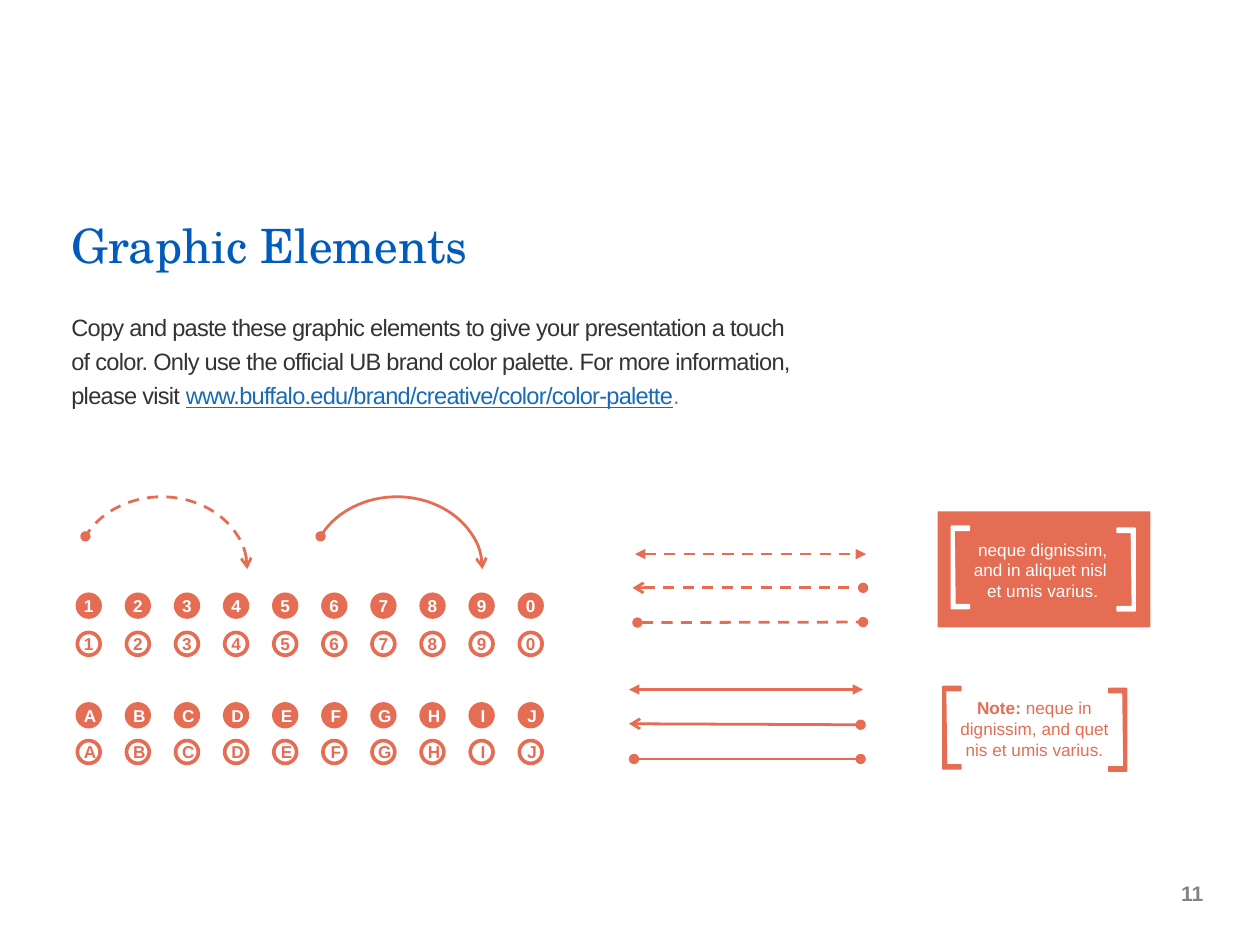
import pptx
import pptx.dml.color
import pptx.enum.dml
import pptx.enum.shapes
import pptx.enum.text
import pptx.oxml.ns
import pptx.util
from lxml import etree

Cm = pptx.util.Cm
Pt = pptx.util.Pt
SHAPE = pptx.enum.shapes.MSO_SHAPE
ALIGN = pptx.enum.text.PP_ALIGN
ANCHOR = pptx.enum.text.MSO_ANCHOR
qn = pptx.oxml.ns.qn

CORAL, WHITE, BLUE = "E56D54", "FFFFFF", "005BBB"
DARK, LINK, GREY = "333333", "186BB7", "828383"
SMALL = 9.8


def rgb(value):
    return pptx.dml.color.RGBColor.from_string(value)


def paint(s, fill=None, line=None, width=1):
    s.shadow.inherit = False
    if fill:
        s.fill.solid()
        s.fill.fore_color.rgb = rgb(fill)
    else:
        s.fill.background()
    if line:
        s.line.color.rgb = rgb(line)
        s.line.width = Pt(width)
    else:
        s.line.fill.background()


def style_stroke(s, head, tail, dashed):
    """Give an open line its colour, dash and end marks."""
    s.line.color.rgb = rgb(CORAL)
    s.line.width = Pt(1.6)
    if dashed:
        s.line.dash_style = pptx.enum.dml.MSO_LINE.DASH
    ln = s.line._get_or_add_ln()
    etree.SubElement(ln, qn("a:headEnd"), type=head)
    etree.SubElement(ln, qn("a:tailEnd"), type=tail)


def add_run(p, text, size, color, font="Arial", bold=False, underline=None):
    r = p.add_run()
    r.text = text
    r.font.name = font
    r.font.size = Pt(size)
    r.font.bold = bold
    r.font.underline = underline
    r.font.color.rgb = rgb(color)
    return r


def add_text(slide, x, y, w, h, align=ALIGN.LEFT, anchor=ANCHOR.TOP):
    """Add a wrapping text box and return its first paragraph."""
    tf = slide.shapes.add_textbox(Cm(x), Cm(y), Cm(w), Cm(h)).text_frame
    tf.word_wrap = True
    tf.vertical_anchor = anchor
    p = tf.paragraphs[0]
    p.alignment = align
    return p


def add_badge_row(slide, labels, y, filled, left_inset=0):
    for i, label in enumerate(labels):
        s = slide.shapes.add_shape(SHAPE.OVAL, Cm(1.56 + i * 0.99), Cm(y), Cm(0.46), Cm(0.46))
        paint(s, CORAL if filled else None, CORAL, 2 if filled else 2.09)
        tf = s.text_frame
        tf.word_wrap = False
        tf.margin_left = Cm(left_inset)
        tf.margin_right = tf.margin_top = tf.margin_bottom = 0
        p = tf.paragraphs[0]
        p.alignment = ALIGN.CENTER
        add_run(p, label, SMALL, WHITE if filled else CORAL, bold=True)


def add_arc(slide, x, dashed):
    s = slide.shapes.add_shape(SHAPE.ARC, Cm(x), Cm(9.75), Cm(2.92), Cm(3.45))
    s.adjustments[0], s.adjustments[1] = 162, 40.02
    s.rotation = 270
    s._element.spPr.get_or_add_xfrm().set("flipV", "1")
    paint(s)
    style_stroke(s, "arrow", "oval", dashed)


def add_line(slide, x1, y1, x2, y2, head, tail, dashed):
    s = slide.shapes.add_connector(
        pptx.enum.shapes.MSO_CONNECTOR.STRAIGHT, Cm(x1), Cm(y1), Cm(x2), Cm(y2))
    style_stroke(s, head, tail, dashed)
    etree.SubElement(s._element.spPr, qn("a:effectLst"))


def add_bracket(slide, x, y, color, rotation=0):
    points = [(0.36, 0), (0, 0), (0, 1.66), (0.36, 1.66),
              (0.36, 1.58), (0.07, 1.58), (0.05, 0.08), (0.36, 0.08)]
    outline = [(Cm(x + dx), Cm(y + dy)) for dx, dy in points]
    builder = slide.shapes.build_freeform(*outline[0])
    builder.add_line_segments(outline[1:], close=True)
    s = builder.convert_to_shape()
    s.rotation = rotation
    paint(s, color, color)


def add_bracket_pair(slide, left, right, y, color):
    add_bracket(slide, left, y, color)
    add_bracket(slide, right, y + 0.04, color, 180)


def add_intro(slide):
    p = add_text(slide, 1.19, 3.66, 8.89, 1.98, anchor=ANCHOR.BOTTOM)
    p.line_spacing = 0.9
    add_run(p, "Graphic Elements", 27, BLUE, "TeX Gyre Schola")

    p = add_text(slide, 1.19, 6.07, 15.16, 2.59)
    p.line_spacing = Pt(19.5)
    for text, color, underline in (
        ("Copy and paste these graphic elements to give your presentation a touch of color. "
         "Only use the official UB brand color palette. For more information, please visit ",
         DARK, None),
        ("www.buffalo.edu/brand/creative/color/color-palette", LINK, True),
        (".", GREY, None),
    ):
        r = add_run(p, text, 13.5, color, underline=underline)
        r.font._element.set("spc", "-40")


def add_notes_in_brackets(slide):
    s = slide.shapes.add_shape(SHAPE.RECTANGLE, Cm(18.9), Cm(10.31), Cm(4.29), Cm(2.34))
    paint(s, CORAL)
    add_bracket_pair(slide, 19.18, 22.52, 10.61, WHITE)
    p = add_text(slide, 19.38, 10.74, 3.28, 1.5, ALIGN.CENTER)
    add_run(p, "neque dignissim, and in aliquet nisl ", SMALL, WHITE)
    p.add_line_break()
    add_run(p, "et umis varius.", SMALL, WHITE)

    add_bracket_pair(slide, 19.01, 22.35, 13.84, CORAL)
    p = add_text(slide, 19, 13.94, 3.71, 1.5, ALIGN.CENTER)
    add_run(p, "Note: ", SMALL, CORAL, bold=True)
    add_run(p, "neque in dignissim, and quet nis et umis varius.", SMALL, CORAL)


def main():
    prs = pptx.Presentation()
    prs.slide_width, prs.slide_height = Cm(25.4), Cm(19.05)
    slide = prs.slides.add_slide(prs.slide_layouts[6])

    add_intro(slide)
    add_arc(slide, 1.8, True)
    add_arc(slide, 6.54, False)

    for labels, filled_y, open_y, inset in (("1234567890", 11.98, 12.75, 0),
                                            ("ABCDEFGHIJ", 14.19, 14.93, 0.06)):
        add_badge_row(slide, labels, filled_y, True, inset)
        add_badge_row(slide, labels, open_y, False, inset)

    for x1, y1, x2, y2, head, tail, dashed in (
        (12.8, 11.17, 17.46, 11.17, "triangle", "triangle", True),
        (12.75, 11.85, 17.4, 11.85, "arrow", "oval", True),
        (12.85, 12.55, 17.4, 12.54, "oval", "oval", True),
        (12.68, 13.9, 17.4, 13.9, "triangle", "triangle", False),
        (12.68, 14.59, 17.35, 14.61, "arrow", "oval", False),
        (12.78, 15.3, 17.35, 15.3, "oval", "oval", False),
    ):
        add_line(slide, x1, y1, x2, y2, head, tail, dashed)

    add_notes_in_brackets(slide)
    p = add_text(slide, 23.01, 17.27, 1.5, 1.47, ALIGN.RIGHT, ANCHOR.MIDDLE)
    add_run(p, "11", 12, GREY, bold=True)
    prs.save("out.pptx")


if __name__ == "__main__":
    main()
